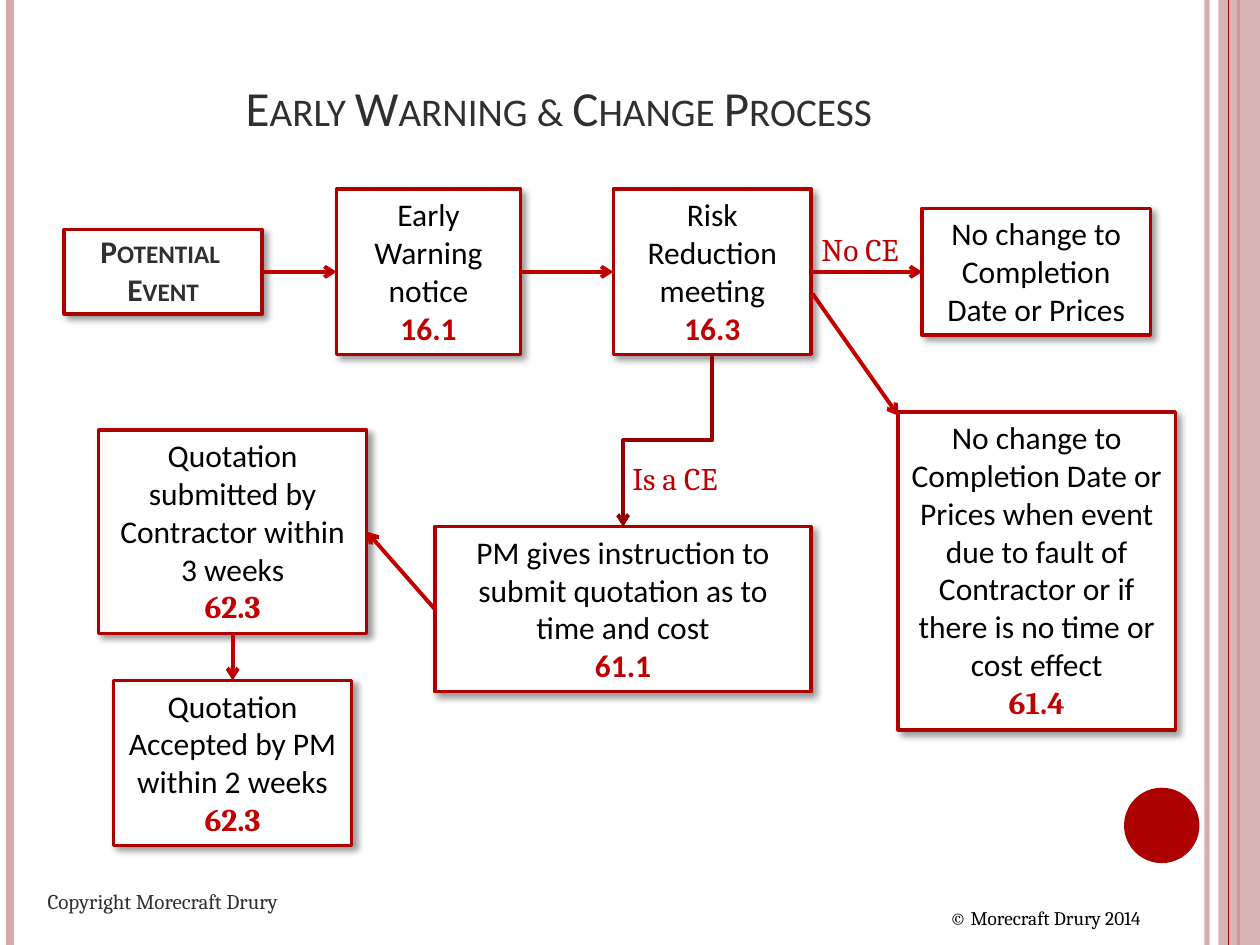
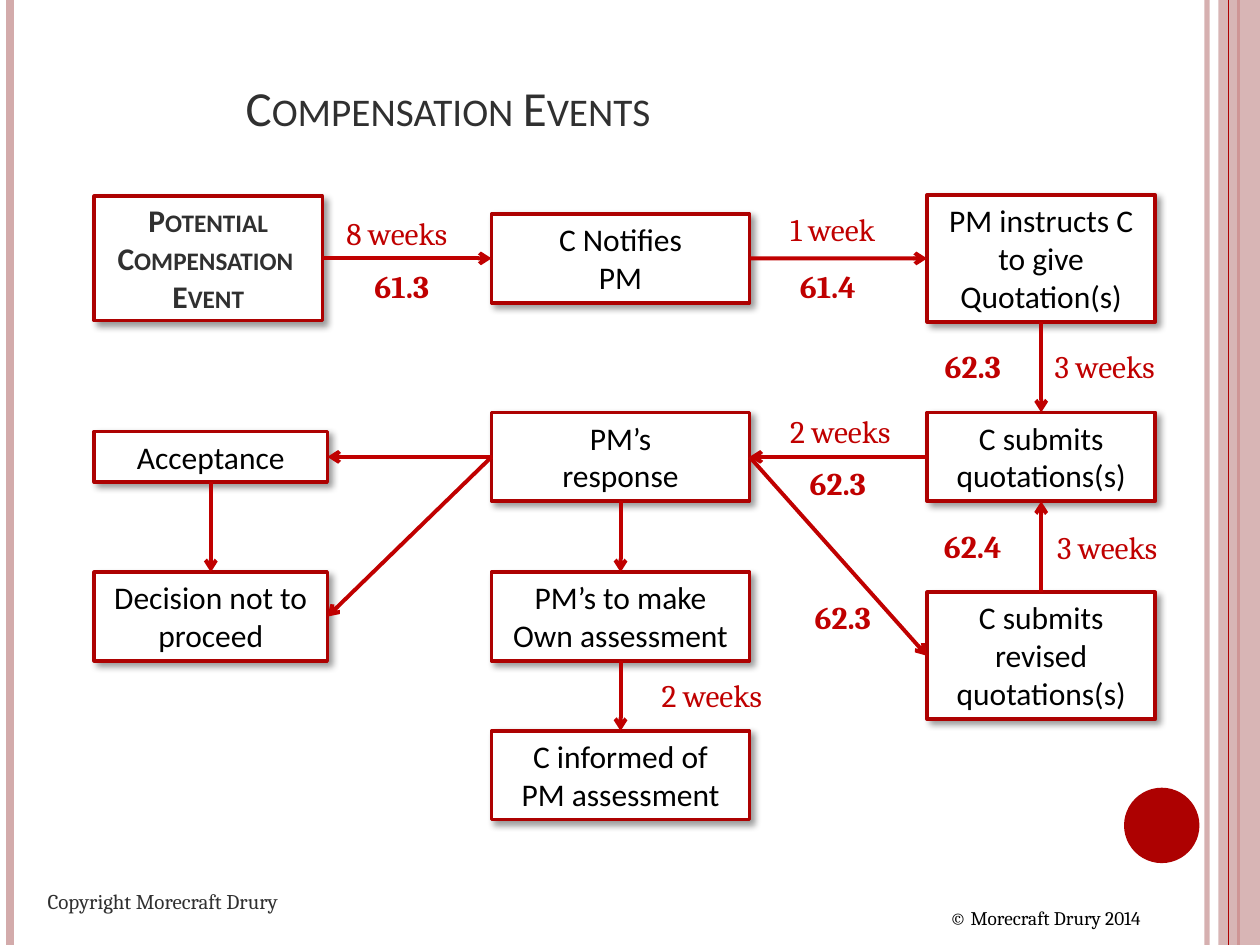
from lxml import etree
from pptx import Presentation
from pptx import util as u
from pptx.dml.color import RGBColor
from pptx.enum import shapes, text
from pptx.oxml.ns import qn

TOP, LEFT, BASE, RIGHT = range(4)
LABEL = 1.02


def paint(code):
    return RGBColor.from_string(code)


def node(parent, tag, **attrs):
    return etree.SubElement(parent, qn(tag), **attrs)


def fade(shape, share):
    for tint in shape.element.spPr.iter(qn("a:srgbClr")):
        node(tint, "a:alpha", val=str(share * 1000))


class Deck:
    red, deep, dark = "C00000", "AD0101", "950000"
    pink, grey, black, white = "D3ABAB", "303030", "000000", "FFFFFF"
    sans, serif = "Calibri", "Cambria"

    def __init__(self):
        self.show = Presentation()
        self.show.slide_width, self.show.slide_height = u.Cm(25.4), u.Cm(19.05)
        self.slide = None

    def start(self, title):
        self.slide = self.show.slides.add_slide(self.show.slide_layouts[5])
        self.frame()
        head = self.slide.shapes.title
        head.left, head.top = u.Cm(4.7), u.Cm(1.12)
        head.width, head.height = u.Cm(19.71), u.Cm(1.75)
        self.letter(head, title, 28, self.sans, self.grey, anchor="BOTTOM", small=True)

    def frame(self):
        fade(self.line(24.33, 0, 24.33, 19.05, self.pink, 3), 93)
        self.line(0.2, 0, 0.2, 19.05, self.pink, 4.5)
        self.line(24.97, 0, 24.97, 19.05, self.deep, 1.5)
        band = self.solid("RECTANGLE", 24.56, 0, 0.84, 19.05, self.pink)
        fade(band, 87)
        self.line(24.77, 0, 24.77, 19.05, self.deep, 0.75)
        self.solid("OVAL", 22.66, 15.88, 1.52, 1.52, self.deep)
        self.label(18.9, 18.14, "© Morecraft Drury 2014", 5.28, 0.74, 11, self.black)
        self.label(0.71, 17.65, "Copyright Morecraft Drury", 8.61, LABEL, 12,
                   self.grey, anchor="MIDDLE")

    def letter(self, shape, words, size, face, color, bold=False, align="LEFT",
               anchor="TOP", small=False):
        body = shape.text_frame
        body.text = words
        body.word_wrap = True
        body.auto_size = text.MSO_AUTO_SIZE.NONE
        body.vertical_anchor = text.MSO_ANCHOR[anchor]
        for para in body.paragraphs:
            para.alignment = text.PP_ALIGN[align]
            for run in para.runs:
                self.style(run, size, face, color, bold)
                if small:
                    run.font._element.set("cap", "small")

    def style(self, run, size, face, color, bold):
        font = run.font
        font.size, font.name, font.bold = u.Pt(size), face, bold
        font.color.rgb = paint(color)

    def solid(self, kind, x, y, w, h, color):
        shape = self.slide.shapes.add_shape(
            shapes.MSO_SHAPE[kind], u.Cm(x), u.Cm(y), u.Cm(w), u.Cm(h))
        shape.shadow.inherit = False
        shape.fill.solid()
        shape.fill.fore_color.rgb = paint(color)
        shape.line.fill.background()
        return shape

    def panel(self, mid, row, w, h):
        shape = self.solid("RECTANGLE", mid - w / 2, row - h / 2, w, h, self.white)
        shape.line.color.rgb = paint(self.deep)
        shape.line.width = u.Pt(2)
        glow = node(shape.element.spPr.find(qn("a:effectLst")), "a:outerShdw",
                    blurRad=str(u.Pt(4)), dist=str(u.Pt(3)), dir="2700000",
                    algn="tl", rotWithShape="0")
        node(node(glow, "a:srgbClr", val=self.black), "a:alpha", val="40000")
        return shape

    def event(self, mid, row, w, h, words):
        shape = self.panel(mid, row, w, h)
        self.letter(shape, words, 18, self.sans, self.grey, True, "CENTER", "BOTTOM", True)
        return shape

    def box(self, mid, row, w, lines, words, clause=None, face=sans):
        shape = self.panel(mid, row, w, 0.25 + 0.77 * lines)
        self.letter(shape, words, 18, self.sans, self.black, align="CENTER")
        if clause:
            para = shape.text_frame.add_paragraph()
            para.text = clause
            para.alignment = text.PP_ALIGN.CENTER
            self.style(para.runs[0], 18, face, self.red, True)
        return shape

    def label(self, x, y, words, w=2.9, h=LABEL, size=18, color=red, **look):
        shape = self.slide.shapes.add_textbox(u.Cm(x), u.Cm(y), u.Cm(w), u.Cm(h))
        self.letter(shape, words, size, self.serif, color, **look)

    def line(self, x, y, x2, y2, color, width, kind="STRAIGHT"):
        rule = self.slide.shapes.add_connector(
            shapes.MSO_CONNECTOR[kind], u.Cm(x), u.Cm(y), u.Cm(x2), u.Cm(y2))
        rule.line.color.rgb = paint(color)
        rule.line.width = u.Pt(width)
        node(rule.element.spPr, "a:effectLst")
        return rule

    def arrow(self, x=0, y=0, x2=1, y2=1, color=red, kind="STRAIGHT"):
        rule = self.line(x, y, x2, y2, color, 2.25, kind)
        node(rule.element.spPr.find(qn("a:ln")), "a:tailEnd", type="arrow")
        return rule

    def link(self, first, side, last, end):
        rule = self.arrow()
        rule.begin_connect(first, side)
        rule.end_connect(last, end)

    def elbow(self, x, y, x2, y2):
        mid, row = (x + x2) / 2, (y + y2) / 2
        long, wide = (y2 - y) / 2, (x - x2) / 2
        rule = self.arrow(mid - long, row - wide, mid + long, row + wide,
                          self.dark, "ELBOW")
        rule.element.spPr.find(qn("a:xfrm")).set("rot", "5400000")


def warning(deck):
    deck.start("Early Warning & Change Process")
    row, side = 5.48, 4.69
    event = deck.event(3.29, row, 3.99, 1.7, "Potential \vEvent")
    notice = deck.box(8.64, row, 3.71, 4, "Early Warning notice", "16.1")
    risk = deck.box(14.36, row, 3.99, 4, "Risk Reduction meeting", "16.3")
    same = deck.box(20.89, row, 4.6, 3, "No change to Completion Date or Prices")
    deck.box(20.9, 11.51, 5.59, 8,
             "No change to Completion Date or Prices when event due to fault of "
             "Contractor or if there is no time or cost effect", "61.4", deck.serif)
    order = deck.box(12.56, 12.28, 7.59, 4,
                     "PM gives instruction to submit quotation as to time and cost", "61.1")
    quote = deck.box(side, 10.72, 5.41, 5,
                     "Quotation submitted by Contractor within 3 weeks", "62.3", deck.serif)
    agreed = deck.box(side, 15.38, 4.8, 4,
                      "Quotation Accepted by PM within 2 weeks", "62.3", deck.serif)
    for first, last in ((event, notice), (notice, risk), (risk, same)):
        deck.link(first, RIGHT, last, LEFT)
    deck.elbow(14.36, 7.14, 12.56, 10.62)
    deck.arrow(16.38, 5.92, 18.11, 8.38)
    deck.link(order, LEFT, quote, RIGHT)
    deck.link(quote, BASE, agreed, TOP)
    deck.label(16.31, 4.52, "No CE", 2.39)
    deck.label(12.5, 9.12, "Is a CE", 2.39)


def events(deck):
    deck.start("Compensation Events")
    left, mid, right = 4.25, 12.51, 20.99
    top, reply, own = 5.21, 9.21, 12.43
    event = deck.event(4.2, top, 4.6, 2.51, "Potential\nCompensation \vEvent")
    notify = deck.box(mid, top, 5.2, 2, "C Notifies\nPM")
    ask = deck.box(right, top, 4.6, 3, "PM instructs C to give Quotation(s)")
    submit = deck.box(right, reply, 4.6, 2, "C submits quotations(s)")
    answer = deck.box(mid, reply, 5.2, 2, "PM’s\nresponse")
    accept = deck.box(left, reply, 4.7, 1, "Acceptance")
    stop = deck.box(left, own, 4.7, 2, "Decision not to proceed")
    revise = deck.box(right, 13.22, 4.6, 3, "C submits revised quotations(s)")
    assess = deck.box(mid, own, 5.2, 2, "PM’s to make\nOwn assessment")
    inform = deck.box(mid, 15.63, 5.2, 2, "C informed of\nPM assessment")
    for first, side, last, end in (
            (event, RIGHT, notify, LEFT), (notify, RIGHT, ask, LEFT),
            (ask, BASE, submit, TOP), (revise, TOP, submit, BASE),
            (submit, LEFT, answer, RIGHT), (answer, LEFT, accept, RIGHT),
            (answer, LEFT, stop, RIGHT), (answer, RIGHT, revise, LEFT),
            (accept, BASE, stop, TOP), (answer, BASE, assess, TOP),
            (assess, BASE, inform, TOP)):
        deck.link(first, side, last, end)
    for x, y, words in ((6.5, 4.19, "8 weeks"), (15.29, 4.11, "1 week"),
                        (15.44, 8.18, "2 weeks"), (12.85, 13.51, "2 weeks")):
        deck.label(x, y, words, 3, align="CENTER")
    for x, y, clause in ((6.6, 5.26, "61.3"), (15.19, 5.26, "61.4"),
                         (18.11, 6.88, "62.3"), (18.11, 10.49, "62.4"),
                         (15.39, 9.22, "62.3"), (15.49, 11.94, "62.3")):
        deck.label(x, y, clause, 3, align="CENTER", bold=True)
    deck.label(21.01, 6.88, "3 weeks")
    deck.label(21.06, 10.52, "3 weeks")


def main():
    deck = Deck()
    warning(deck)
    events(deck)
    deck.show.save("out.pptx")


if __name__ == "__main__":
    main()
